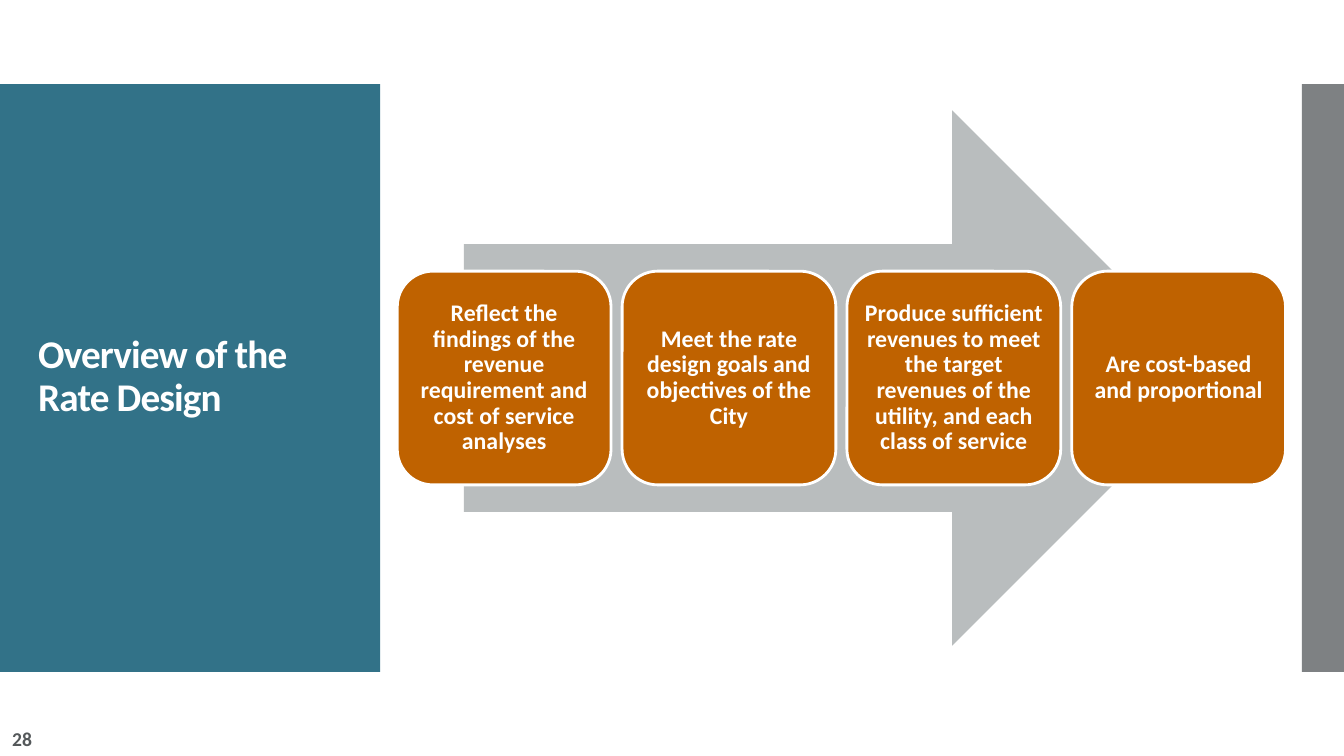
"""Build the rate design overview slide: title panel, arrow and four goal cards."""
from lxml.etree import SubElement
from pptx import Presentation
from pptx.dml.color import RGBColor as RGB
from pptx.enum.shapes import MSO_SHAPE as SHAPE
from pptx.enum.text import MSO_ANCHOR as ANCHOR, PP_ALIGN as ALIGN
from pptx.oxml.ns import qn
from pptx.util import Inches, Pt

THEME = {
    "font": "Calibri",
    "panel": RGB.from_string("327288"),
    "gray": RGB.from_string("54585A"),
    "arrow": RGB.from_string("B9BDBE"),
    "card": RGB.from_string("BF6200"),
    "white": RGB.from_string("FFFFFF"),
    "title_size": Pt(28),
    "card_size": Pt(17),
    "number_size": Pt(14),
}
WIDTH, HEIGHT = 13.33, 7.5
BAND_TOP, BAND_HEIGHT = HEIGHT / 9, HEIGHT * 7 / 9
EDGE = WIDTH / 32
CARD, STEP, CARD_LEFT = 2.12, 2.23, 3.94
ARROW_HEIGHT = 5.31
MIDDLE = HEIGHT / 2
GOALS = [
    "Reflect the findings of the revenue requirement and cost of service analyses",
    "Meet the rate design goals and objectives of the City",
    "Produce sufficient revenues to meet the target revenues of the utility, and each class of service",
    "Are cost-based and proportional",
]

prs = Presentation()
prs.slide_width, prs.slide_height = Inches(WIDTH), Inches(HEIGHT)
s = prs.slides.add_slide(prs.slide_layouts[6])


def add_block(kind, left, top, width, height, fill):
    sp = s.shapes.add_shape(kind, *map(Inches, (left, top, width, height)))
    sp.shadow.inherit = False
    sp.fill.solid()
    sp.fill.fore_color.rgb = fill
    sp.line.fill.background()
    return sp


def write(sp, text, size, color, align, anchor, spacing=1.0):
    tf = sp.text_frame
    tf.word_wrap = True
    tf.vertical_anchor = anchor
    p = tf.paragraphs[0]
    p.text = text
    p.alignment = align
    p.line_spacing = spacing
    r = p.runs[0]
    r.font.name, r.font.size, r.font.bold = THEME["font"], size, True
    r.font.color.rgb = color
    return r


add_block(SHAPE.RECTANGLE, 0, BAND_TOP, 3.77, BAND_HEIGHT, THEME["panel"])
strip = add_block(SHAPE.RECTANGLE, WIDTH - EDGE, BAND_TOP, EDGE, BAND_HEIGHT, THEME["gray"])
strip_color = strip.fill._xPr.find(qn("a:solidFill"))[0]
SubElement(strip_color, qn("a:alpha"), val="75000")

add_block(SHAPE.RIGHT_ARROW, 4.6, MIDDLE - ARROW_HEIGHT / 2, 7.5, ARROW_HEIGHT, THEME["arrow"])

for i, goal in enumerate(GOALS):
    sp = add_block(SHAPE.ROUNDED_RECTANGLE, CARD_LEFT + i * STEP, MIDDLE - CARD / 2, CARD, CARD, THEME["card"])
    sp.line.color.rgb = THEME["white"]
    sp.line.width = Pt(2)
    tf = sp.text_frame
    tf.margin_left = tf.margin_right = tf.margin_top = tf.margin_bottom = Inches(0.07)
    write(sp, goal, THEME["card_size"], THEME["white"], ALIGN.CENTER, ANCHOR.MIDDLE, 0.9)

number = s.shapes.add_textbox(0, Inches(7.16), Inches(EDGE), Inches(0.34))
number.text_frame.margin_left = 0
write(number, "28", THEME["number_size"], THEME["gray"], ALIGN.RIGHT, ANCHOR.TOP)

title = s.shapes.add_textbox(*map(Inches, (0.28, 1.23, 3.22, 5.03)))
r = write(title, "Overview of the Rate Design", THEME["title_size"], THEME["white"], ALIGN.LEFT, ANCHOR.MIDDLE, 0.9)
r.font._element.set("spc", "-60")

prs.save("out.pptx")
